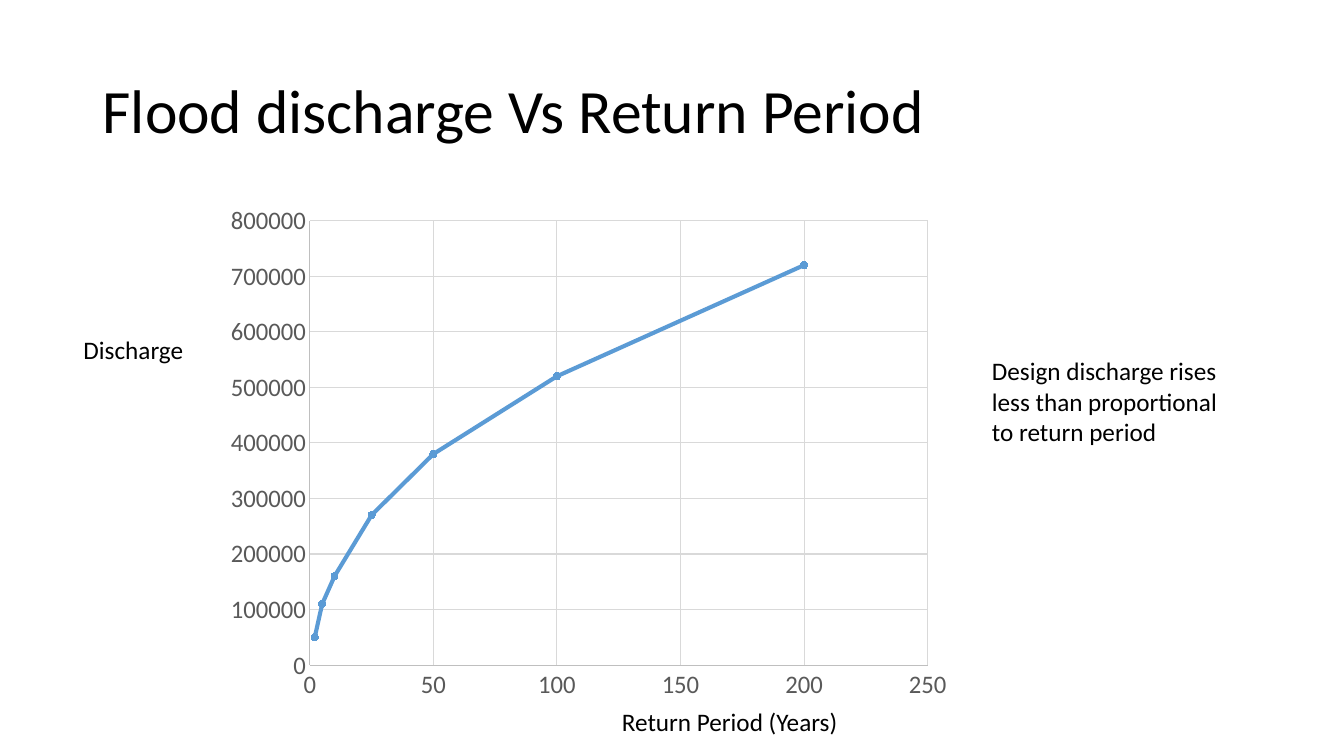
import pptx
import pptx.chart.data
import pptx.dml.color
import pptx.enum.chart
import pptx.enum.text
import pptx.util
from lxml import etree
from pptx.oxml.ns import qn

Inches = pptx.util.Inches
Pt = pptx.util.Pt
RGBColor = pptx.dml.color.RGBColor

FONT = "Calibri"
BLACK = RGBColor(0x00, 0x00, 0x00)
LABEL_GREY = RGBColor(0x59, 0x59, 0x59)
AXIS_GREY = RGBColor(0xBF, 0xBF, 0xBF)
GRID_GREY = RGBColor(0xD9, 0xD9, 0xD9)
CURVE_BLUE = RGBColor(0x5B, 0x9B, 0xD5)

TITLE = ("Flood discharge Vs Return Period", (0.92, 0.4, 11.5, 1.45), 44, True)
LABELS = [
    ("Discharge", (0.73, 3.27, 1.2, 0.4), 18, False),
    ("Return Period (Years)", (6.07, 6.96, 2.36, 0.4), 18, False),
    ("Design discharge rises less than proportional to return period",
     (9.74, 3.48, 2.5, 1.01), 18, True),
]
FLOODS = [(2, 50000), (5, 110000), (10, 160000), (25, 270000),
          (50, 380000), (100, 520000), (200, 720000)]
CHART_BOX = (2.29, 1.98, 7.12, 5.25)
PLOT_AREA = {"x": 0.09, "y": 0.04, "w": 0.88, "h": 0.84}
AXIS_SCALES = {"period": (250, 50), "discharge": (800000, 100000)}


def add_text(slide, content):
    text, box, size, wrap = content
    frame = slide.shapes.add_textbox(*map(Inches, box)).text_frame
    frame.word_wrap = wrap
    frame.text = text
    font = frame.paragraphs[0].runs[0].font
    font.name, font.size = FONT, Pt(size)
    font.color.rgb = BLACK
    return frame


def style_line(line, color, width):
    line.color.rgb = color
    line.width = Pt(width)


def style_axis(axis, scale):
    axis.minimum_scale = 0
    axis.maximum_scale, axis.major_unit = scale
    axis.has_title = False
    axis.has_major_gridlines = True
    axis.major_tick_mark = pptx.enum.chart.XL_TICK_MARK.NONE
    axis.minor_tick_mark = pptx.enum.chart.XL_TICK_MARK.NONE
    font = axis.tick_labels.font
    font.name, font.size = FONT, Pt(18)
    font.color.rgb = LABEL_GREY
    axis.tick_labels.number_format = "General"
    axis.tick_labels.number_format_is_linked = False
    style_line(axis.format.line, AXIS_GREY, 0.75)
    style_line(axis.major_gridlines.format.line, GRID_GREY, 0.75)


def place_plot(chart):
    plot_area = chart.plots[0]._element.getparent()
    for old_layout in plot_area.findall(qn("c:layout")):
        plot_area.remove(old_layout)
    layout = etree.Element(qn("c:layout"))
    plot_area.insert(0, layout)
    manual = etree.SubElement(layout, qn("c:manualLayout"))
    settings = [("layoutTarget", "inner"), ("xMode", "edge"), ("yMode", "edge")]
    for tag, value in settings + list(PLOT_AREA.items()):
        etree.SubElement(manual, qn("c:" + tag)).set("val", str(value))


def add_flood_chart(slide):
    data = pptx.chart.data.XyChartData()
    floods = data.add_series("Series 1")
    for period, discharge in FLOODS:
        floods.add_data_point(period, discharge)
    chart = slide.shapes.add_chart(
        pptx.enum.chart.XL_CHART_TYPE.XY_SCATTER_SMOOTH,
        *map(Inches, CHART_BOX), data).chart
    chart.has_legend = False
    chart.has_title = False
    chart.font.name, chart.font.size = FONT, Pt(10)
    chart.font.color.rgb = BLACK
    chart.plots[0].vary_by_categories = False
    style_axis(chart.category_axis, AXIS_SCALES["period"])
    style_axis(chart.value_axis, AXIS_SCALES["discharge"])

    curve = chart.plots[0].series[0]
    curve.smooth = True
    style_line(curve.format.line, CURVE_BLUE, 3)
    curve.marker.style = pptx.enum.chart.XL_MARKER_STYLE.CIRCLE
    curve.marker.size = 5
    curve.marker.format.fill.solid()
    curve.marker.format.fill.fore_color.rgb = CURVE_BLUE
    style_line(curve.marker.format.line, CURVE_BLUE, 0.75)
    place_plot(chart)


def main():
    deck = pptx.Presentation()
    deck.slide_width, deck.slide_height = Inches(13.33), Inches(7.5)
    slide = deck.slides.add_slide(deck.slide_layouts[6])
    heading = add_text(slide, TITLE)
    heading.vertical_anchor = pptx.enum.text.MSO_ANCHOR.MIDDLE
    heading.paragraphs[0].line_spacing = 0.9
    add_flood_chart(slide)
    for label in LABELS:
        add_text(slide, label)
    deck.save("out.pptx")


if __name__ == "__main__":
    main()
